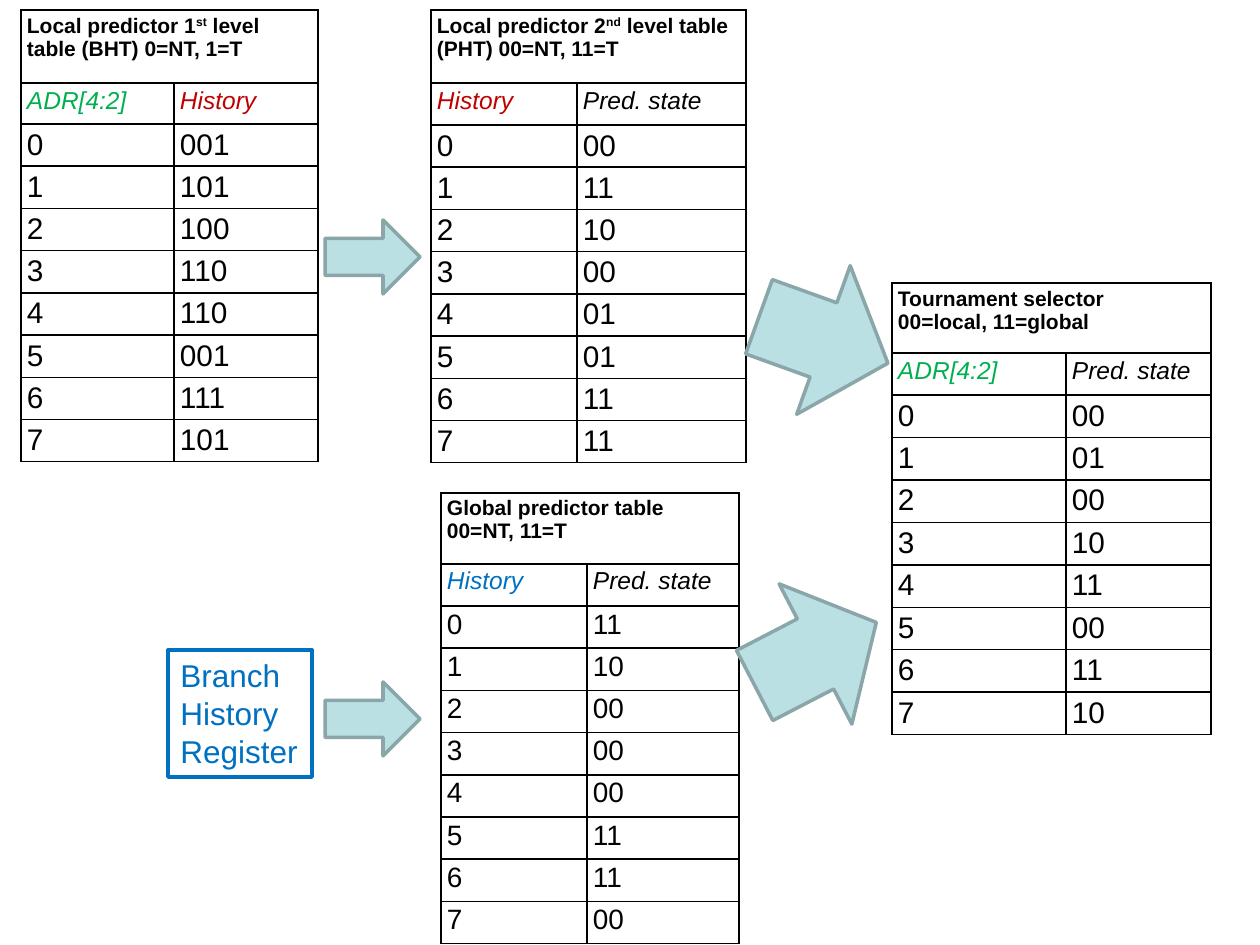
import lxml.etree
import pptx
import pptx.dml.color
import pptx.enum.shapes
import pptx.enum.text
import pptx.oxml.ns
import pptx.util

PX = 914400 / 126
FONT = "Arial"
COLORS = {
    "black": "000000",
    "address": "00B050",
    "local": "C00000",
    "global": "0070C0",
    "arrow": "BBE0E3",
    "arrow_line": "8AA6A8",
}
ADDRESS = ("ADR[4:2]", "address")
LOCAL_HISTORY = ("History", "local")
GLOBAL_HISTORY = ("History", "global")
STATE = ("Pred. state", "black")


def px(n):
    """Turn slide pixels into EMU."""
    return pptx.util.Emu(round(n * PX))


def rgb(name):
    """Look up a named colour."""
    return pptx.dml.color.RGBColor.from_string(COLORS[name])


def write(tf, text, size, color="black", bold=False, italic=False):
    """Write lines of text, raising the parts between carets."""
    for i, line in enumerate(text.split("\n")):
        p = tf.add_paragraph() if i else tf.paragraphs[0]
        p.alignment = pptx.enum.text.PP_ALIGN.LEFT
        for j, part in enumerate(line.split("^")):
            r = p.add_run()
            r.text = part
            r.font.name = FONT
            r.font.size = pptx.util.Pt(size)
            r.font.bold = bold
            r.font.italic = italic
            r.font.color.rgb = rgb(color)
            if j % 2:
                r._r.get_or_add_rPr().set("baseline", "30000")


def style_cell(cell, margin):
    """Give a cell thin black borders, no fill and tight margins."""
    tc_pr = cell._tc.get_or_add_tcPr()
    qn = pptx.oxml.ns.qn
    for side in ("a:lnL", "a:lnR", "a:lnT", "a:lnB"):
        ln = lxml.etree.SubElement(tc_pr, qn(side), w=str(pptx.util.Pt(1)))
        fill = lxml.etree.SubElement(ln, qn("a:solidFill"))
        lxml.etree.SubElement(fill, qn("a:srgbClr"), val=COLORS["black"])
    cell.fill.background()
    cell.margin_left = cell.margin_right = px(6)
    cell.margin_top = cell.margin_bottom = px(margin)


def add_predictor(slide, box, split, heads, title, headers, values, size=17, margin=4):
    """Add a titled table of numbered entries."""
    x, y, w, h = box
    rows = len(values) + 2
    table = slide.shapes.add_table(rows, 2, px(x), px(y), px(w), px(h)).table
    table.first_row = table.horz_banding = False
    for column, width in zip(table.columns, (split, w - split)):
        column.width = px(width)
    entry = (h - sum(heads)) / len(values)
    for row, height in zip(table.rows, [*heads, *[entry] * len(values)]):
        row.height = px(height)
    for cell in table.iter_cells():
        style_cell(cell, margin)
    table.cell(0, 0).merge(table.cell(0, 1))
    write(table.cell(0, 0).text_frame, title, 12, bold=True)
    for c, (text, color) in enumerate(headers):
        write(table.cell(1, c).text_frame, text, 14, color, italic=True)
    for i, value in enumerate(values):
        for c, text in enumerate((str(i), value)):
            write(table.cell(i + 2, c).text_frame, text, size)


def add_arrow(slide, x, y, w, h, rotation=0):
    """Add a block arrow."""
    kind = pptx.enum.shapes.MSO_SHAPE.RIGHT_ARROW
    sp = slide.shapes.add_shape(kind, px(x), px(y), px(w), px(h))
    sp.shadow.inherit = False
    sp.rotation = rotation
    sp.fill.solid()
    sp.fill.fore_color.rgb = rgb("arrow")
    sp.line.color.rgb = rgb("arrow_line")
    sp.line.width = pptx.util.Pt(2)


def add_register(slide, x, y, w, h, text):
    """Add an outlined box for a register."""
    kind = pptx.enum.shapes.MSO_SHAPE.RECTANGLE
    sp = slide.shapes.add_shape(kind, px(x), px(y), px(w), px(h))
    sp.shadow.inherit = False
    sp.fill.background()
    sp.line.color.rgb = rgb("global")
    sp.line.width = pptx.util.Pt(2.25)
    tf = sp.text_frame
    tf.word_wrap = False
    tf.auto_size = pptx.enum.text.MSO_AUTO_SIZE.SHAPE_TO_FIT_TEXT
    tf.vertical_anchor = pptx.enum.text.MSO_ANCHOR.TOP
    write(tf, text, 18, "global")


def main():
    """Build the branch predictor slide."""
    prs = pptx.Presentation()
    prs.slide_width, prs.slide_height = px(1260), px(945)
    slide = prs.slides.add_slide(prs.slide_layouts[6])

    add_predictor(slide, (892, 283, 319, 452), 174, (70, 42),
                  "Tournament selector\n00=local, 11=global", (ADDRESS, STATE),
                  ("00", "01", "00", "10", "11", "00", "11", "10"))
    add_predictor(slide, (21, 10, 297, 452), 153, (73, 41),
                  "Local predictor 1^st^ level table (BHT) 0=NT, 1=T",
                  (ADDRESS, LOCAL_HISTORY),
                  ("001", "101", "100", "110", "110", "001", "111", "101"))
    add_predictor(slide, (431, 10, 315, 453), 146, (73, 42),
                  "Local predictor 2^nd^ level table (PHT) 00=NT, 11=T",
                  (LOCAL_HISTORY, STATE),
                  ("00", "11", "10", "00", "01", "01", "11", "11"))
    add_predictor(slide, (441, 493, 298, 451), 146, (71, 42),
                  "Global predictor table\n00=NT, 11=T", (GLOBAL_HISTORY, STATE),
                  ("11", "10", "00", "00", "00", "11", "11", "00"),
                  size=16, margin=3)

    add_register(slide, 168, 650, 144, 127, "Branch\nHistory\nRegister")
    for y in (220, 682):
        add_arrow(slide, 325, y, 95, 74)
    add_arrow(slide, 755, 261, 137, 158, 19.8)
    add_arrow(slide, 747, 575, 137, 158, 332.6)
    prs.save("out.pptx")


if __name__ == "__main__":
    main()
